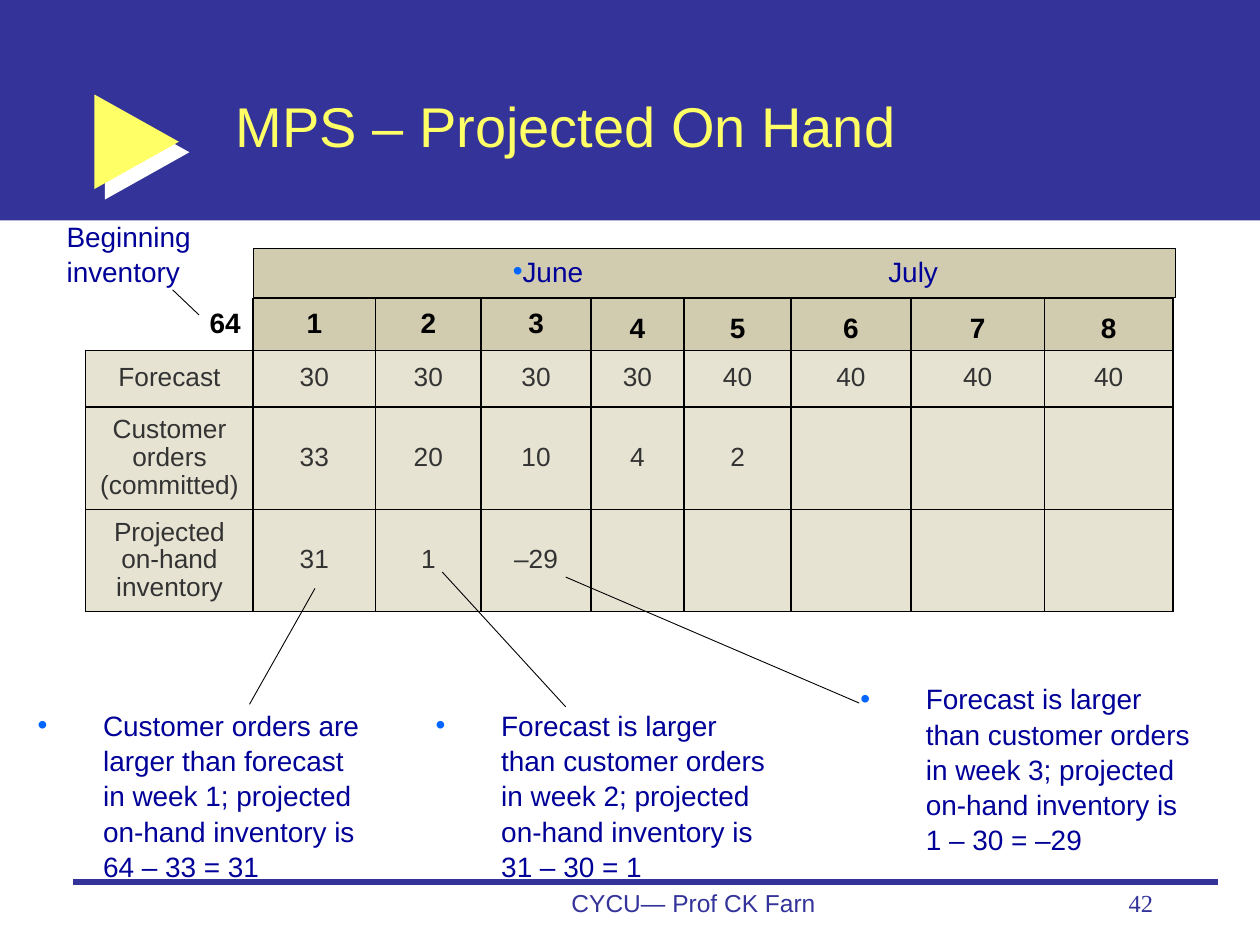
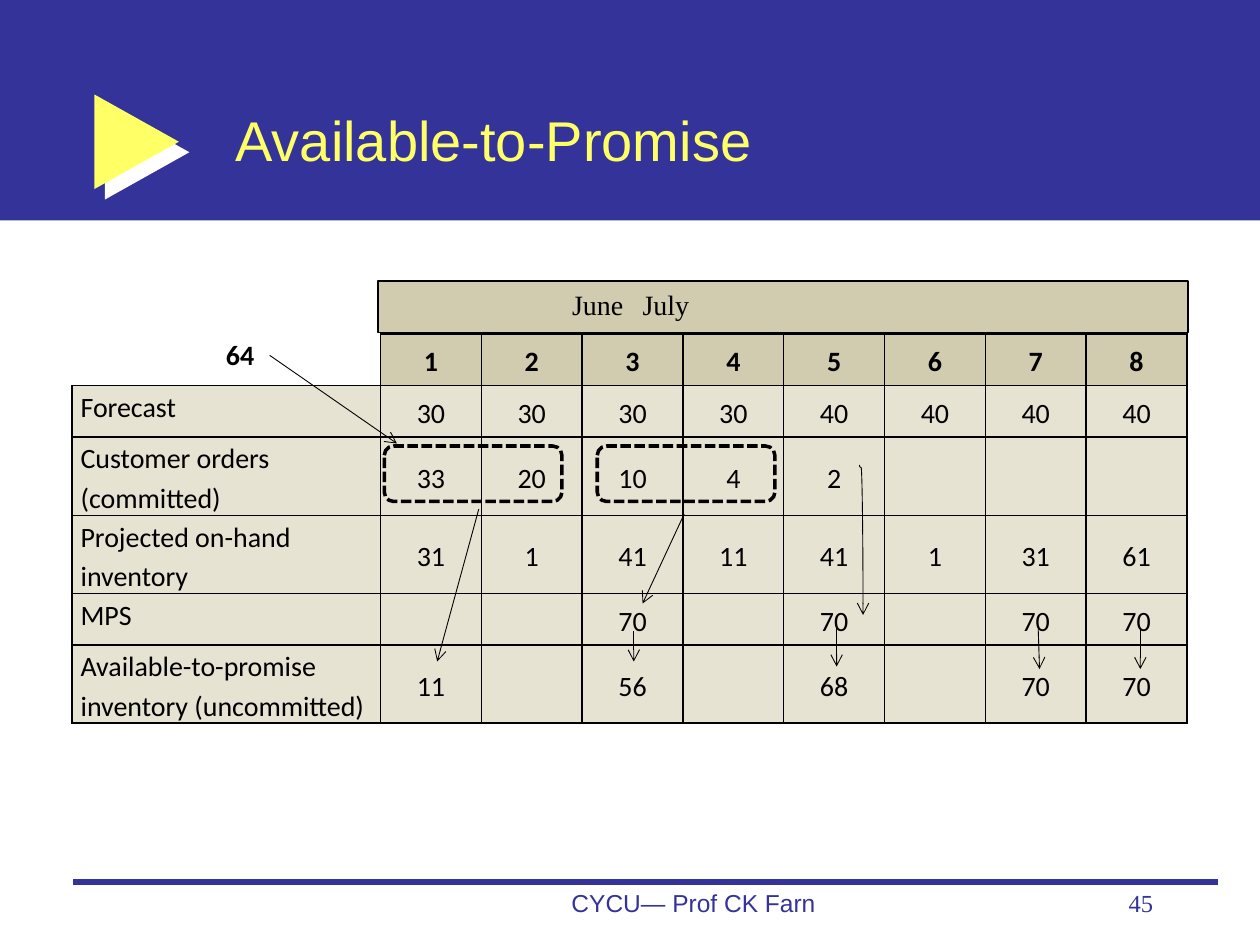
from pptx import Presentation
from pptx.dml.color import RGBColor
from pptx.enum.dml import MSO_LINE
from pptx.enum.shapes import MSO_CONNECTOR, MSO_SHAPE
from pptx.enum.text import MSO_ANCHOR, MSO_AUTO_SIZE, PP_ALIGN
from pptx.oxml.ns import qn
from pptx.util import Emu, Inches, Pt
from lxml import etree

NAVY = RGBColor(0x33, 0x33, 0x99)
YELLOW = RGBColor(0xFF, 0xFF, 0x66)
NOTE_BLUE = RGBColor(0x00, 0x00, 0x99)
BULLET_BLUE = RGBColor(0x00, 0x66, 0xFF)
HEADER_TAN = RGBColor(0xD1, 0xCB, 0xAF)
CELL_TAN = RGBColor(0xE6, 0xE3, 0xD2)
CHARCOAL = RGBColor(0x33, 0x33, 0x33)
BLACK = RGBColor(0, 0, 0)
WHITE = RGBColor(0xFF, 0xFF, 0xFF)

LEFT, CENTER, RIGHT = PP_ALIGN.LEFT, PP_ALIGN.CENTER, PP_ALIGN.RIGHT
TOP, MIDDLE, BOTTOM = MSO_ANCHOR.TOP, MSO_ANCHOR.MIDDLE, MSO_ANCHOR.BOTTOM
RECTANGLE, ROUNDED = MSO_SHAPE.RECTANGLE, MSO_SHAPE.ROUNDED_RECTANGLE
RIGHT_ARROW = MSO_SHAPE.RIGHT_ARROW
STRAIGHT, CURVE = MSO_CONNECTOR.STRAIGHT, MSO_CONNECTOR.CURVE
SHORT_DASH = MSO_LINE.SQUARE_DOT
NO_AUTOFIT = MSO_AUTO_SIZE.NONE

TITLE_AND_CONTENT = 1
WEEKS = [str(week) for week in range(1, 9)]
FORECAST = ["30"] * 4 + ["40"] * 4
ORDERS = ["33", "20", "10", "4", "2", "", "", ""]


# ---- Text ----
def write_text(frame, text, *, size=16, font="Arial", color=BLACK, bold=False,
               align=LEFT, spacing=1.0):
    paragraph = frame.paragraphs[0]
    paragraph.alignment = align
    paragraph.line_spacing = spacing
    paragraph.space_before = Pt(0)
    run = paragraph.add_run()
    run.text = text
    run.font.size = Pt(size)
    run.font.name = font
    run.font.bold = bold
    run.font.color.rgb = color
    return paragraph


def place(shape, box):
    shape.left, shape.top, shape.width, shape.height = map(Inches, box)


def add_text(slide, box, text, **text_format):
    frame = slide.shapes.add_textbox(*map(Inches, box)).text_frame
    frame.word_wrap = True
    return write_text(frame, text, **text_format)


def set_indent(paragraph, margin, indent, bullet=False, tab=None):
    props = paragraph._p.get_or_add_pPr()
    props.set("marL", str(Inches(margin)))
    props.set("indent", str(Inches(indent)))
    if bullet:
        color = etree.SubElement(props, qn("a:buClr"))
        etree.SubElement(color, qn("a:srgbClr"), val=str(BULLET_BLUE))
        etree.SubElement(props, qn("a:buFont"), typeface="Arial")
        etree.SubElement(props, qn("a:buChar"), char="•")
    else:
        etree.SubElement(props, qn("a:buNone"))
    if tab:
        tabs = etree.SubElement(props, qn("a:tabLst"))
        etree.SubElement(tabs, qn("a:tab"), pos=str(Inches(tab)), algn="l")


def add_note(slide, left, top, text):
    paragraph = add_text(slide, (left, top, 2.84, 1.35), text,
                         color=NOTE_BLUE, spacing=1.05)
    set_indent(paragraph, 0.52, -0.52, bullet=True)


# ---- Shapes and lines ----
def add_filled(slide, preset, box, color):
    shape = slide.shapes.add_shape(preset, *map(Inches, box))
    shape.shadow.inherit = False
    shape.fill.solid()
    shape.fill.fore_color.rgb = color
    shape.line.fill.background()
    return shape


def add_line(slide, start, end, color=BLACK, width=0.5, arrow=False, kind=STRAIGHT):
    line = slide.shapes.add_connector(kind, *map(Inches, start + end))
    line.line.color.rgb = color
    line.line.width = Pt(width)
    if arrow:
        etree.SubElement(line.line._get_or_add_ln(), qn("a:tailEnd"), type="arrow")
    etree.SubElement(line.element.spPr, qn("a:effectLst"))
    return line


def add_turned_curve(slide, start, end, bend):
    """Curve drawn sideways, then turned so that it runs downwards."""
    curve = add_line(slide, start, end, arrow=True, kind=CURVE)
    props = curve.element.spPr
    props.find(qn("a:xfrm")).set("rot", str(270 * 60000))
    guides = props.find(qn("a:prstGeom")).find(qn("a:avLst"))
    etree.SubElement(guides, qn("a:gd"), name="adj1", fmla=f"val {bend}")


def add_dashed_group(slide, left):
    group = slide.shapes.add_shape(ROUNDED, *map(Inches, (left, 3.54, 1.41, 0.44)))
    group.shadow.inherit = False
    group.fill.background()
    group.line.color.rgb = BLACK
    group.line.width = Pt(2)
    group.line.dash_style = SHORT_DASH


def add_white_shadow(shape):
    effects = shape.element.spPr.find(qn("a:effectLst"))
    shadow = etree.SubElement(effects, qn("a:outerShdw"), dist=str(Pt(8.5)),
                              dir=str(45 * 60000), algn="ctr", rotWithShape="0")
    etree.SubElement(shadow, qn("a:srgbClr"), val=str(WHITE))


# ---- What every slide shares ----
def add_base_slide(deck, title_text, title_box, page):
    slide = deck.slides.add_slide(deck.slide_layouts[TITLE_AND_CONTENT])
    title = slide.shapes.title
    place(title, title_box)
    title.text_frame.auto_size = NO_AUTOFIT
    title.text_frame.vertical_anchor = MIDDLE
    write_text(title.text_frame, title_text, size=32, color=YELLOW)

    band = add_filled(slide, RECTANGLE, (0, 0, 10, 1.75), NAVY)
    marker = add_filled(slide, RIGHT_ARROW, (0.75, 0.75, 0.67, 0.75), YELLOW)
    marker.adjustments[0], marker.adjustments[1] = 0.38, 1
    add_white_shadow(marker)
    for backdrop in (band, marker):
        title.element.addprevious(backdrop.element)

    add_line(slide, (0.58, 7), (9.67, 7), NAVY, 3)
    add_text(slide, (3.92, 7, 3.17, 0.5), "CYCU— Prof CK Farn",
             size=14, color=NAVY, align=CENTER)
    add_text(slide, (7.17, 7, 2.08, 0.5), page, size=14,
             font="Times New Roman", color=NAVY, align=RIGHT)
    return slide


def fill_month_band(slide, box, font, color):
    months = slide.placeholders[1]
    place(months, box)
    months.fill.solid()
    months.fill.fore_color.rgb = HEADER_TAN
    months.line.color.rgb = BLACK
    months.line.width = Pt(0.75)
    months.text_frame.auto_size = NO_AUTOFIT
    months.text_frame.vertical_anchor = TOP
    return write_text(months.text_frame, "June\tJuly", font=font, color=color)


# ---- Schedule table ----
def set_borders(cell, sides):
    props = cell._tc.get_or_add_tcPr()
    for position, side in enumerate("LRTB"):
        border = etree.Element(qn(f"a:ln{side}"), w=str(Pt(1)))
        if side in sides:
            fill = etree.SubElement(border, qn("a:solidFill"))
            etree.SubElement(fill, qn("a:srgbClr"), val=str(BLACK))
        else:
            etree.SubElement(border, qn("a:noFill"))
        props.insert(position, border)


def add_schedule(slide, corner, widths, heights, rows, *, font, body_size, body_color,
                 spacing, label_align, label_anchor, margins=(0.1, 0.05)):
    left, top = corner
    table = slide.shapes.add_table(
        len(rows), len(widths), Inches(left), Inches(top),
        Inches(sum(widths)), Inches(sum(heights))).table
    table.first_row = table.horz_banding = False
    for column, width in zip(table.columns, widths):
        column.width = Inches(width)
    for row, height in zip(table.rows, heights):
        row.height = Inches(height)

    for r, values in enumerate(rows):
        header = r == 0
        for c, value in enumerate(values):
            cell = table.cell(r, c)
            is_start = header and c == 0
            cell.fill.solid()
            cell.fill.fore_color.rgb = (
                WHITE if is_start else HEADER_TAN if header else CELL_TAN)
            set_borders(cell, "RB" if is_start else "LRTB")
            cell.margin_left = cell.margin_right = Inches(margins[0])
            cell.margin_top = cell.margin_bottom = Inches(margins[1])
            cell.vertical_anchor = label_anchor if c == 0 else MIDDLE
            if value:
                write_text(cell.text_frame, value, font=font, bold=header,
                           size=16 if header else body_size,
                           color=BLACK if header else body_color,
                           align=label_align if c == 0 and not header else CENTER,
                           spacing=spacing)
    return table


# ---- Slides ----
def build_projected_on_hand(deck):
    slide = add_base_slide(deck, "MPS – Projected On Hand", (1.77, 0.65, 6.06, 0.69), "42")
    add_text(slide, (0.43, 1.68, 1.21, 0.71), "Beginning inventory",
             color=NOTE_BLUE, spacing=1.05)
    months = fill_month_band(slide, (2.01, 1.97, 7.32, 0.39), "Arial", NOTE_BLUE)
    set_indent(months, 0.52, 1.44, bullet=True, tab=4.94)

    rows = [
        ["64"] + WEEKS,
        ["Forecast"] + FORECAST,
        ["Customer orders (committed)"] + ORDERS,
        ["Projected on-hand inventory", "31", "1", "–29"] + [""] * 5,
    ]
    schedule = add_schedule(
        slide, (0.68, 2.37), [1.33, 0.97, 0.84, 0.87, 0.74, 0.85, 0.95, 1.06, 1.02],
        [0.41, 0.45, 0.79, 0.79], rows, font="Arial", body_size=15,
        body_color=CHARCOAL, spacing=0.95, label_align=CENTER, label_anchor=MIDDLE)
    schedule.cell(0, 0).text_frame.paragraphs[0].alignment = RIGHT
    for week in range(4, 9):
        schedule.cell(0, week).vertical_anchor = BOTTOM

    # Lines from the figures to their explanations
    for start, end in [((1.37, 2.3), (1.58, 2.5)), ((1.98, 5.59), (2.5, 4.67)),
                       ((4.49, 5.61), (3.51, 4.54)), ((6.82, 5.58), (4.49, 4.58))]:
        add_line(slide, start, end)

    for left, top, comparison, week, result in [
            (0.2, 5.56, "Customer orders are larger than forecast", 1, "64 – 33 = 31"),
            (3.36, 5.56, "Forecast is larger than customer orders", 2, "31 – 30 = 1"),
            (6.73, 5.35, "Forecast is larger than customer orders", 3, "1 – 30 = –29")]:
        add_note(slide, left, top, f"{comparison} in week {week}; "
                 f"projected on-hand inventory is {result}")


def build_available_to_promise(deck):
    slide = add_base_slide(deck, "Available-to-Promise", (1.77, 0.58, 4.31, 1.05), "45")
    months = fill_month_band(slide, (3, 2.23, 6.43, 0.41), "Times New Roman", BLACK)
    set_indent(months, 0, 1.44, tab=2)

    rows = [
        ["64"] + WEEKS,
        ["Forecast"] + FORECAST,
        ["Customer orders (committed)"] + ORDERS,
        ["Projected on-hand inventory", "31", "1", "41", "11", "41", "1", "31", "61"],
        ["MPS", "", "", "70", "", "70", "", "70", "70"],
        ["Available-to-promise inventory (uncommitted)",
         "11", "", "56", "", "68", "", "70", "70"],
    ]
    schedule = add_schedule(
        slide, (0.57, 2.65), [2.45] + [0.8] * 8, [0.41, 0.41, 0.62, 0.62, 0.41, 0.62],
        rows, font="Calibri", body_size=16, body_color=BLACK, spacing=1.15,
        label_align=LEFT, label_anchor=TOP, margins=(0.07, 0))
    schedule.cell(0, 0).margin_left = Inches(0.29)

    # Orders that each supply has to cover
    for left in (3.05, 4.74):
        add_dashed_group(slide, left)

    # Arrows to the available-to-promise figures
    for start, end in [((2.14, 2.82), (3.15, 3.52)), ((3.8, 4.04), (3.47, 5.25)),
                       ((5.43, 4.08), (5.1, 4.79)), ((5.03, 5.01), (5.03, 5.25)),
                       ((6.64, 4.98), (6.64, 5.29)), ((8.24, 4.99), (8.25, 5.31)),
                       ((9.05, 4.99), (9.05, 5.31))]:
        add_line(slide, start, end, arrow=True)
    add_turned_curve(slide, (7.43, 4.27), (6.24, 4.3), 1800)


def main():
    deck = Presentation()
    deck.slide_width, deck.slide_height = Inches(10), Inches(7.5)
    build_projected_on_hand(deck)
    build_available_to_promise(deck)
    deck.save("out.pptx")


if __name__ == "__main__":
    main()
